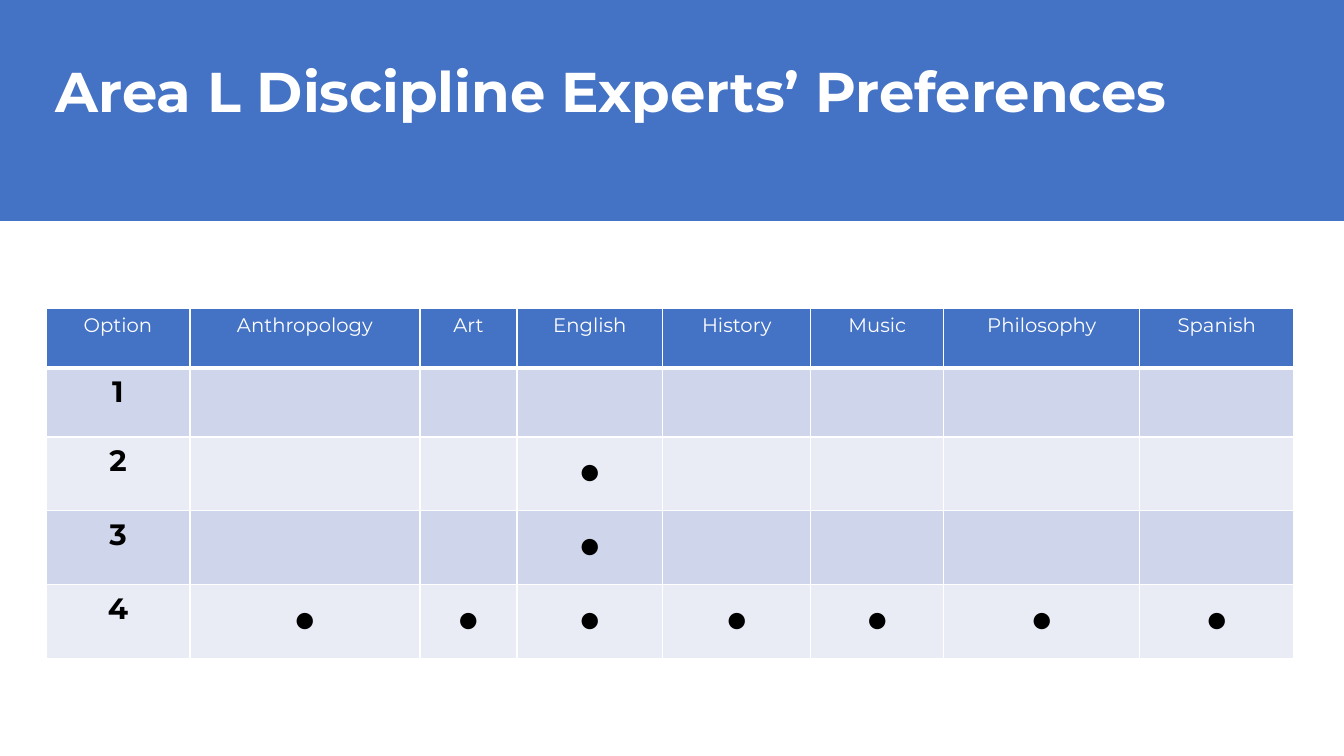
from lxml import etree
from pptx import Presentation
from pptx import util as u
from pptx.dml.color import RGBColor
from pptx.enum import shapes, text
from pptx.oxml.ns import qn

PX = 914400 / 100.8
THEME = {
    "blue": "4472C4", "white": "FFFFFF", "black": "000000",
    "bands": ("CFD5EA", "E9EBF5"),
    "font": "Montserrat", "dot_font": "Calibri",
    "title": 40, "header": 14, "option": 21, "dot": 33,
}


def px(n):
    return u.Emu(round(n * PX))


def add_run(p, words, size, color, font=THEME["font"], bold=False):
    r = p.add_run()
    r.text = words
    r.font.name, r.font.size, r.font.bold = font, u.Pt(size), bold
    r.font.color.rgb = RGBColor.from_string(color)


prs = Presentation()
prs.slide_width, prs.slide_height = px(1344), px(756)
s = prs.slides.add_slide(prs.slide_layouts[6])

# Title band
band = s.shapes.add_shape(shapes.MSO_SHAPE.RECTANGLE, 0, 0, px(1344), px(221))
band.shadow.inherit = False
band.fill.solid()
band.fill.fore_color.rgb = RGBColor.from_string(THEME["blue"])
band.line.fill.background()

title = s.shapes.add_textbox(px(46), px(27), px(1159), px(103))
tf = title.text_frame
tf.word_wrap = True
tf.vertical_anchor = text.MSO_ANCHOR.BOTTOM
p = tf.paragraphs[0]
p.line_spacing = 0.9
add_run(p, "Area L Discipline Experts’ Preferences", THEME["title"], THEME["white"], bold=True)

# Preference table
columns = {"Option": 144, "Anthropology": 230, "Art": 97, "English": 146,
           "History": 148, "Music": 133, "Philosophy": 196, "Spanish": 154}
subjects = list(columns)[1:]
preferences = {"1": [], "2": ["English"], "3": ["English"], "4": subjects}
row_heights = [60, 69, 74, 74, 74]

table = s.shapes.add_table(len(row_heights), len(columns), px(46), px(308),
                           px(sum(columns.values())), px(sum(row_heights))).table
for col, width in zip(table.columns, columns.values()):
    col.width = px(width)
for row, height in zip(table.rows, row_heights):
    row.height = px(height)

for i, row in enumerate(table.rows):
    for cell in row.cells:
        cell.margin_left = cell.margin_right = px(12)
        cell.margin_top = cell.margin_bottom = px(6)
        cell.text_frame.paragraphs[0].alignment = text.PP_ALIGN.CENTER
        thick_edge = {0: "lnB", 1: "lnT"}.get(i)
        for edge in ("lnL", "lnR", "lnT", "lnB"):
            weight = u.Pt(3 if edge == thick_edge else 1)
            ln = etree.SubElement(cell._tc.get_or_add_tcPr(), qn(f"a:{edge}"), w=str(weight))
            fill = etree.SubElement(ln, qn("a:solidFill"))
            etree.SubElement(fill, qn("a:srgbClr"), val=THEME["white"])
        cell.fill.solid()
        color = THEME["bands"][(i - 1) % 2] if i else THEME["blue"]
        cell.fill.fore_color.rgb = RGBColor.from_string(color)

for j, heading in enumerate(columns):
    p = table.cell(0, j).text_frame.paragraphs[0]
    add_run(p, heading, THEME["header"], THEME["white"])

for i, (option, chosen) in enumerate(preferences.items(), 1):
    p = table.cell(i, 0).text_frame.paragraphs[0]
    add_run(p, option, THEME["option"], THEME["black"], bold=True)
    for subject in chosen:
        p = table.cell(i, subjects.index(subject) + 1).text_frame.paragraphs[0]
        add_run(p, "•", THEME["dot"], THEME["black"], THEME["dot_font"])

prs.save("out.pptx")
